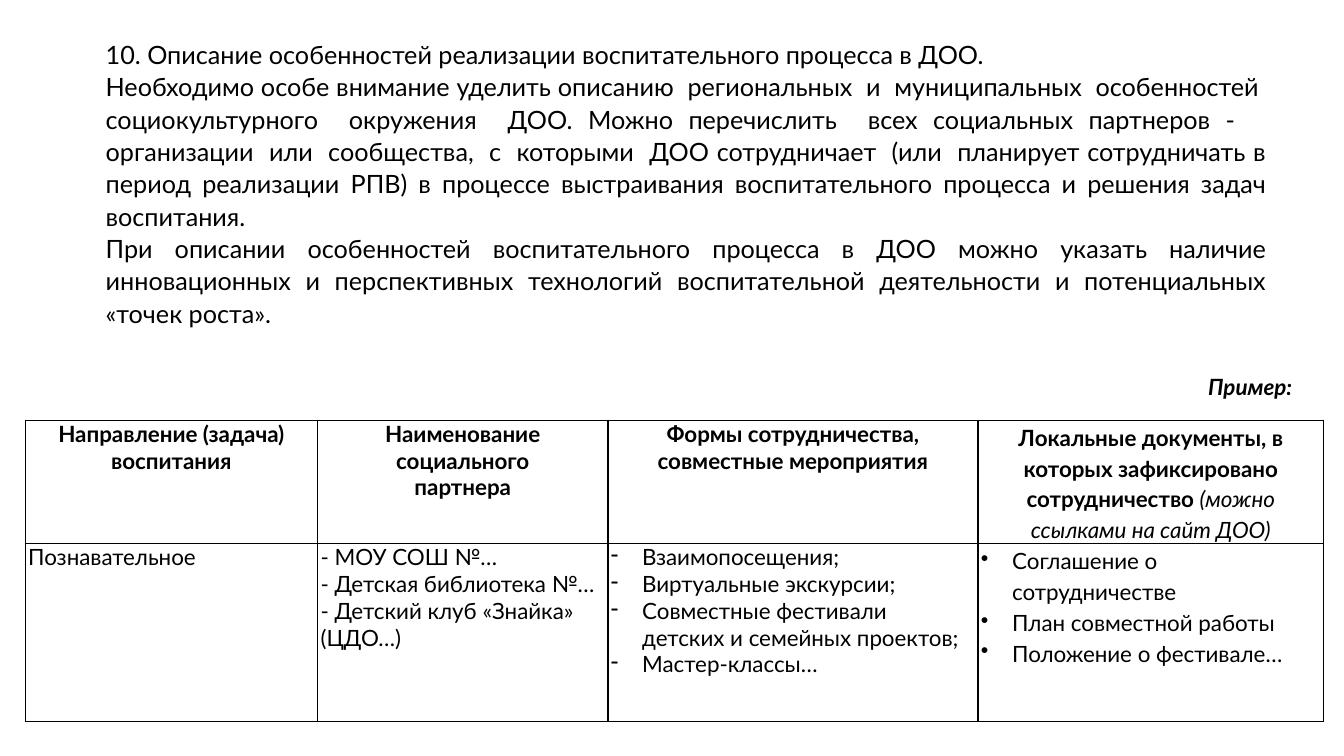
from lxml.etree import SubElement
from pptx import Presentation
from pptx.dml.color import RGBColor
from pptx.enum.text import MSO_AUTO_SIZE as AutoSize, PP_ALIGN as Align
from pptx.oxml.ns import qn
from pptx.util import Inches, Pt

COLORS = {"ink": "000000"}

INTRO = [
    "10. Описание особенностей реализации воспитательного процесса в ДОО.",
    "Необходимо особе внимание уделить описанию  региональных  и  муниципальных  особенностей  "
    "социокультурного  окружения  ДОО. Можно перечислить  всех социальных партнеров -   "
    "организации  или  сообщества,  с  которыми  ДОО сотрудничает  (или  планирует сотрудничать в "
    "период реализации РПВ) в процессе выстраивания воспитательного процесса и решения задач "
    "воспитания. ",
    "При описании особенностей воспитательного процесса в ДОО можно указать наличие "
    "инновационных и перспективных технологий воспитательной деятельности и потенциальных "
    "«точек роста».",
]
COLUMN_WIDTHS = [2.9, 2.88, 3.67, 3.43]
ROW_HEIGHTS = [1.22, 1.76]
LINE_SPACINGS = [None, None, None, 1.15]
BULLETS = [None, None, "-", "•"]
HEADINGS = [
    ["Направление (задача)", "воспитания"],
    ["Наименование", "социального", "партнера"],
    ["Формы сотрудничества, совместные мероприятия"],
    [("Локальные документы, в которых зафиксировано сотрудничество ",
      "(можно ссылками на сайт ДОО)")],
]
EXAMPLES = [
    ["Познавательное"],
    ["- МОУ СОШ №…", "- Детская библиотека №…", "- Детский клуб «Знайка» (ЦДО…)"],
    ["Взаимопосещения;", "Виртуальные экскурсии;",
     "Совместные фестивали детских и семейных проектов;", "Мастер-классы…"],
    ["Соглашение о сотрудничестве", "План совместной работы", "Положение о фестивале…"],
]


class SlideBuilder:
    font_name = "Lato"

    def __init__(self, deck):
        self.slide = deck.slides.add_slide(deck.slide_layouts[6])

    def style(self, font, size, bold=False, italic=False):
        font.name, font.size = self.font_name, Pt(size)
        font.bold, font.italic = bold, italic
        font.color.rgb = RGBColor.from_string(COLORS["ink"])

    def add_text(self, frame, texts, size, align, spacing=None, margin=0, indent=0,
                 bullet=None, bold=False, italic=False):
        for number, text in enumerate(texts):
            para = frame.add_paragraph() if number else frame.paragraphs[0]
            para.alignment = align
            if spacing:
                para.line_spacing = spacing
            properties = para._p.get_or_add_pPr()
            properties.set("marL", str(Inches(margin)))
            properties.set("indent", str(Inches(indent)))
            if bullet:
                SubElement(properties, qn("a:buChar"), char=bullet)
            if isinstance(text, tuple):
                for part, is_note in zip(text, (False, True)):
                    span = para.add_run()
                    span.text = part
                    self.style(span.font, size, not is_note, is_note)
            else:
                para.add_run().text = text
                self.style(para.font, size, bold, italic)

    def text_box(self, left, top, width, height, texts, size, align, **options):
        box = self.slide.shapes.add_textbox(*map(Inches, (left, top, width, height)))
        frame = box.text_frame
        frame.word_wrap = True
        frame.auto_size = AutoSize.SHAPE_TO_FIT_TEXT
        self.add_text(frame, texts, size, align, spacing=1.07, margin=0.25, **options)

    def border(self, cell):
        properties = cell._tc.get_or_add_tcPr()
        for side in ("lnL", "lnR", "lnT", "lnB"):
            line = SubElement(properties, qn(f"a:{side}"), w=str(Pt(1)))
            fill = SubElement(line, qn("a:solidFill"))
            SubElement(fill, qn("a:srgbClr"), val=COLORS["ink"])

    def fill_cell(self, cell, texts, **options):
        cell.margin_left = cell.margin_right = Inches(0.03)
        cell.margin_top = cell.margin_bottom = 0
        self.border(cell)
        cell.fill.background()
        self.add_text(cell.text_frame, texts, 16, **options)

    def partner_table(self, left, top):
        frame = self.slide.shapes.add_table(
            len(ROW_HEIGHTS), len(COLUMN_WIDTHS), Inches(left), Inches(top),
            Inches(sum(COLUMN_WIDTHS)), Inches(sum(ROW_HEIGHTS)))
        table = frame.table
        table.first_row = table.horz_banding = False
        for row, height in zip(table.rows, ROW_HEIGHTS):
            row.height = Inches(height)
        for index, width in enumerate(COLUMN_WIDTHS):
            table.columns[index].width = Inches(width)
            spacing, bullet = LINE_SPACINGS[index], BULLETS[index]
            hang = 0.31 if bullet else 0
            self.fill_cell(table.cell(0, index), HEADINGS[index],
                           align=Align.CENTER, spacing=spacing, bold=True)
            self.fill_cell(table.cell(1, index), EXAMPLES[index], align=Align.LEFT,
                           spacing=spacing, margin=hang, indent=-hang, bullet=bullet)


def main():
    deck = Presentation()
    deck.slide_width, deck.slide_height = Inches(13.33), Inches(7.5)
    page = SlideBuilder(deck)
    page.text_box(0.7, 0.32, 11.96, 3.02, INTRO, 18, Align.JUSTIFY)
    page.partner_table(0.25, 4.17)
    page.text_box(11.52, 3.63, 1.51, 0.36, ["Пример:"], 16, Align.CENTER,
                  bold=True, italic=True)
    deck.save("out.pptx")


if __name__ == "__main__":
    main()
